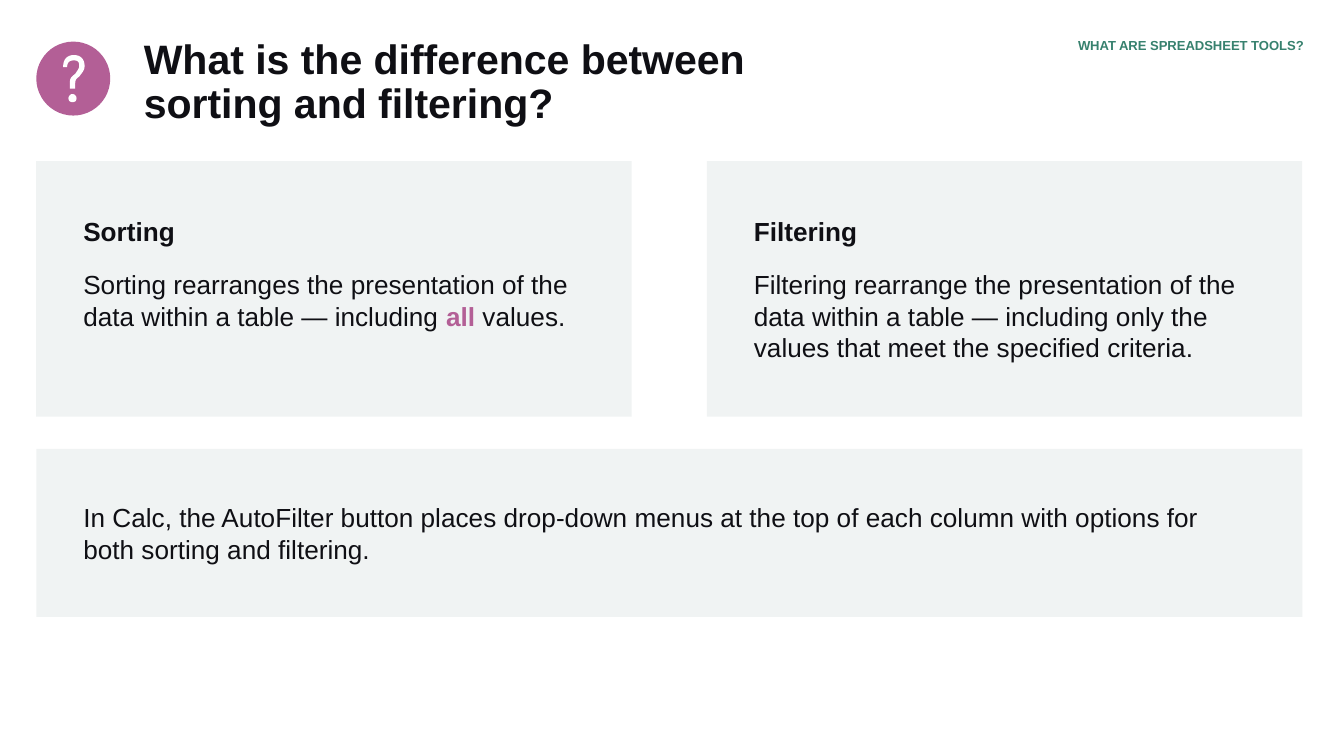
from pptx import Presentation
from pptx.dml.color import RGBColor
from pptx.enum.shapes import MSO_SHAPE
from pptx.enum.text import MSO_ANCHOR, PP_ALIGN
from pptx.util import Inches, Pt

RECT, OVAL = MSO_SHAPE.RECTANGLE, MSO_SHAPE.OVAL
TOP, MIDDLE = MSO_ANCHOR.TOP, MSO_ANCHOR.MIDDLE
LEFT, RIGHT = PP_ALIGN.LEFT, PP_ALIGN.RIGHT

WIDE = 10
HIGH = WIDE * 9 / 16
EDGE, GAP, PAD = 0.27, 0.56, 0.35
FULL = 9.42
HALF = (FULL - GAP) / 2
INK, PANEL, PLUM, GREEN, WHITE = "0F0F14", "F0F3F3", "B35F96", "37816E", "FFFFFF"

# Outlines of the question mark: a start, then curves (three points) or lines (one)
HOOK = [
    (0.52, 0.66), [(0.52, 0.63)],
    [(0.52, 0.59), (0.52, 0.58), (0.56, 0.55)],
    [(0.58, 0.52), (0.59, 0.51), (0.59, 0.49)],
    [(0.59, 0.46), (0.58, 0.45), (0.55, 0.45)],
    [(0.52, 0.45), (0.5, 0.46), (0.5, 0.5)], [(0.47, 0.5)],
    [(0.47, 0.44), (0.5, 0.41), (0.55, 0.41)],
    [(0.6, 0.41), (0.63, 0.44), (0.63, 0.49)],
    [(0.63, 0.52), (0.62, 0.53), (0.59, 0.57)],
    [(0.56, 0.59), (0.56, 0.6), (0.56, 0.64)], [(0.56, 0.66)],
]
DOT = [
    (0.57, 0.73),
    [(0.57, 0.75), (0.56, 0.76), (0.54, 0.76)],
    [(0.52, 0.76), (0.51, 0.75), (0.51, 0.73)],
    [(0.51, 0.72), (0.52, 0.7), (0.54, 0.7)],
    [(0.56, 0.7), (0.57, 0.72), (0.57, 0.73)],
]


def color(code):
    return RGBColor.from_string(code)


def trace(start, *parts, steps=8):
    """Turn lines and Bezier curves into a list of points in EMU."""
    points = [start]
    for part in parts:
        if len(part) == 1:
            points += part
            continue
        a, (b, c, d) = points[-1], part
        for step in range(1, steps + 1):
            t = step / steps
            u = 1 - t
            points.append(tuple(
                u**3 * p + 3 * u * u * t * q + 3 * u * t * t * r + t**3 * s
                for p, q, r, s in zip(a, b, c, d)))
    return [(Inches(x), Inches(y)) for x, y in points]


class Deck:
    def __init__(self):
        self.show = Presentation()
        self.show.slide_width, self.show.slide_height = Inches(WIDE), Inches(HIGH)
        self.slide = self.show.slides.add_slide(self.show.slide_layouts[6])

    def paint(self, shape, fill):
        shape.shadow.inherit = False
        shape.fill.solid()
        shape.fill.fore_color.rgb = color(fill)
        shape.line.fill.background()

    def shape(self, kind, box, fill):
        self.paint(self.slide.shapes.add_shape(kind, *map(Inches, box)), fill)

    def outline(self, fill, first, *others):
        """Draw one free shape out of several closed outlines."""
        form = self.slide.shapes.build_freeform(*first[0])
        form.add_line_segments(first[1:])
        for points in others:
            form.move_to(*points[0])
            form.add_line_segments(points[1:])
        self.paint(form.convert_to_shape(), fill)

    def text(self, box, paras, size=14, tint=INK, align=LEFT, anchor=TOP,
             inset=(0, 0.1, 0.1, 0.1), lead=None, before=0):
        """Each paragraph is (bold, runs); a run in a tuple is an accent."""
        frame = self.slide.shapes.add_textbox(*map(Inches, box)).text_frame
        frame.word_wrap, frame.vertical_anchor = True, anchor
        (frame.margin_left, frame.margin_top,
         frame.margin_right, frame.margin_bottom) = map(Inches, inset)
        for n, (bold, *runs) in enumerate(paras):
            para = frame.add_paragraph() if n else frame.paragraphs[0]
            para.alignment = align
            para.space_before = Pt(before if n else 0)
            if lead:
                para.line_spacing = lead
            font = para.font
            font.name, font.size, font.bold = "Arial", Pt(size), bold
            font.color.rgb = color(tint)
            for item in runs:
                run = para.add_run()
                if isinstance(item, tuple):
                    run.text, hue = item
                    run.font.bold, run.font.color.rgb = True, color(hue)
                else:
                    run.text = item

    def card(self, col, high, head, *body):
        left = EDGE + col * (HALF + GAP)
        self.shape(RECT, (left, 1.2, HALF, 1.9), PANEL)
        self.text((left + PAD, 1.5, HALF - 2 * PAD, high),
                  [(True, head), (False, *body)], before=12)


def main():
    deck = Deck()
    deck.text((1.07, 0.29, 7.99, 0.59),
              [(True, "What is the difference between"), (True, "sorting and filtering?")],
              size=22, inset=(0, 0, 0.1, 0.1), lead=0.9)
    deck.text((7.57, 0.29, 2.13, 0.16), [(True, "WHAT ARE SPREADSHEET TOOLS?")],
              size=7, tint=GREEN, align=RIGHT, inset=(0, 0, 0, 0.1), lead=0.9)
    deck.shape(OVAL, (EDGE, 0.31, 0.55, 0.55), PLUM)
    deck.outline(WHITE, trace(*HOOK), trace(*DOT))
    deck.card(0, 1.08, "Sorting",
              "Sorting rearranges the presentation of the data within a table — including ",
              ("all", PLUM), " values.")
    deck.card(1, 1.31, "Filtering",
              "Filtering rearrange the presentation of the data within a table — "
              "including only the values that meet the specified criteria.")
    deck.shape(RECT, (EDGE, 3.34, FULL, 1.25), PANEL)
    deck.text((EDGE + PAD, 3.34, FULL - 2 * PAD, 1.25),
              [(False, "In Calc, the AutoFilter button places drop-down menus at the top of "
                       "each column with options for both sorting and filtering.")],
              anchor=MIDDLE)
    deck.show.save("out.pptx")


if __name__ == "__main__":
    main()
